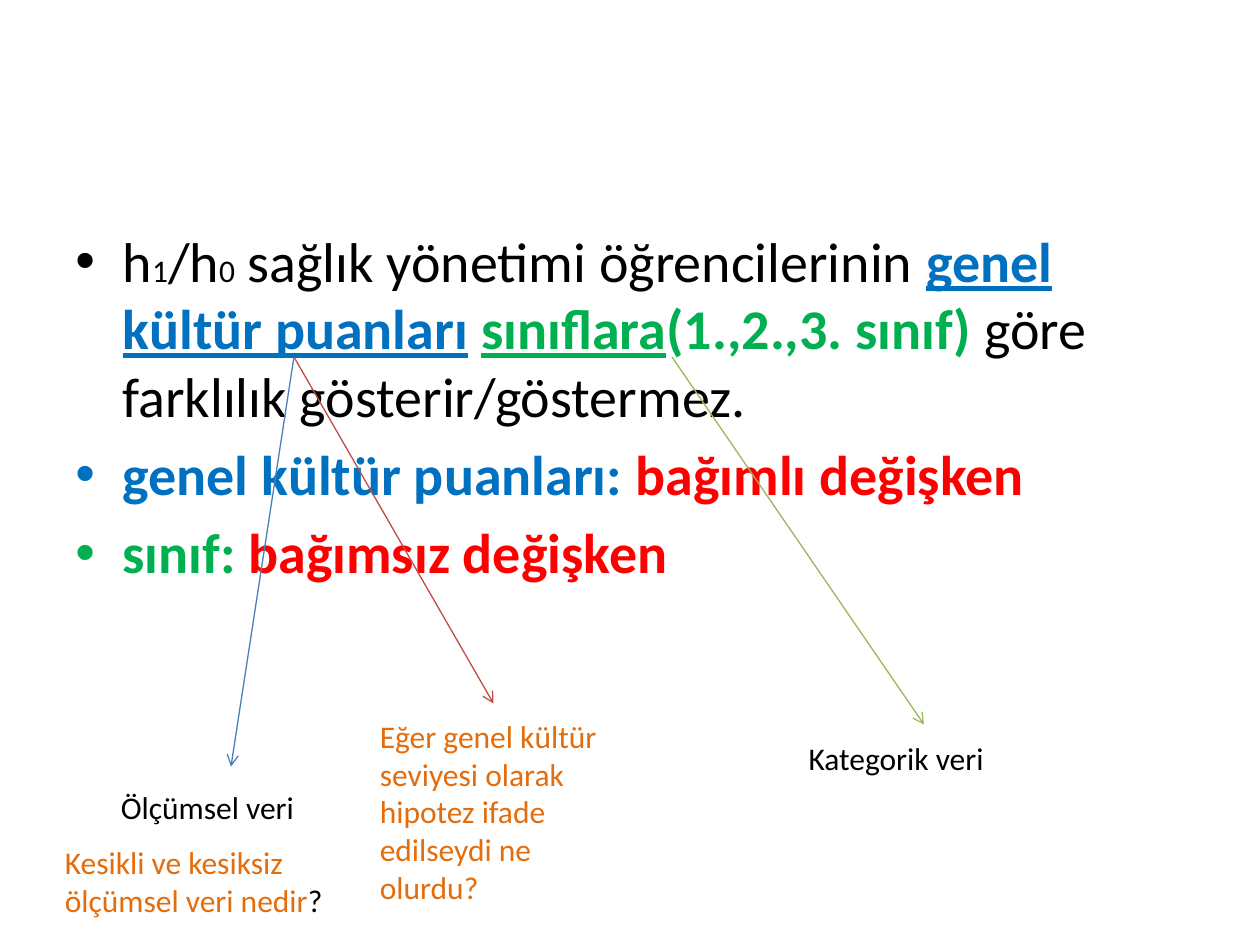
"""Build a slide on dependent and independent variables in a hypothesis."""
from lxml import etree
from pptx import Presentation
from pptx import util as u
from pptx.dml.color import RGBColor
from pptx.enum import shapes
from pptx.oxml.ns import qn

Pt = u.Pt
BLACK, BLUE, GREEN, RED, ORANGE = "000000", "0070C0", "00B050", "FF0000", "E46C0A"


def color(value):
    return RGBColor.from_string(value)


def add_run(paragraph, words, size, fill, bold=False, underline=False):
    run = paragraph.add_run()
    run.text = words
    font = run.font
    font.name, font.size = "Calibri", Pt(size)
    font.bold, font.underline = bold, underline
    font.color.rgb = color(fill)


deck = Presentation()
deck.slide_width, deck.slide_height = Pt(720), Pt(540)
slide = deck.slides.add_slide(deck.slide_layouts[6])

hypothesis = [
    [
        ("h", 32, BLACK),
        ("1", 18, BLACK),
        ("/h", 32, BLACK),
        ("0", 18, BLACK),
        (" sağlık yönetimi öğrencilerinin ", 32, BLACK),
        ("genel kültür puanları", 32, BLUE, True, True),
        (" ", 32, BLACK),
        ("sınıflara", 32, GREEN, True, True),
        ("(1.,2.,3. sınıf)", 32, GREEN, True),
        (" göre farklılık gösterir/göstermez.", 32, BLACK),
    ],
    [("genel kültür puanları: ", 32, BLUE, True), ("bağımlı değişken", 32, RED, True)],
    [("sınıf: ", 32, GREEN, True), ("bağımsız değişken", 32, RED, True)],
]
body = slide.shapes.add_textbox(Pt(36), Pt(126), Pt(648), Pt(356.4)).text_frame
body.word_wrap = True
for index, runs in enumerate(hypothesis):
    item = body.add_paragraph() if index else body.paragraphs[0]
    item.space_before = Pt(6.4)
    for run in runs:
        add_run(item, *run)
    properties = item._p.get_or_add_pPr()
    properties.set("marL", str(Pt(27)))
    properties.set("indent", str(Pt(-27)))
    etree.SubElement(properties, qn("a:buFont")).set("typeface", "Arial")
    etree.SubElement(properties, qn("a:buChar")).set("char", "•")

scores, classes = (168, 204), (384, 204)
arrows = [
    (classes, (528, 414), "98B955"),
    (scores, (132, 438), "4B7EBC"),
    (scores, (282, 402), "BF4C48"),
]
for start, end, stroke in arrows:
    arrow = slide.shapes.add_connector(
        shapes.MSO_CONNECTOR.STRAIGHT, *(Pt(value) for value in start + end)
    )
    arrow.line.color.rgb = color(stroke)
    arrow.line.width = Pt(0.75)
    etree.SubElement(arrow.line._get_or_add_ln(), qn("a:tailEnd")).set("type", "arrow")
    etree.SubElement(arrow._element.spPr, qn("a:effectLst"))

notes = [
    ((62, 447, 144, 29), [("Ölçümsel veri", BLACK)]),
    ((455, 418.5, 144, 29), [("Kategorik veri", BLACK)]),
    (
        (210, 406, 144, 116.6),
        [("Eğer genel kültür seviyesi olarak hipotez ifade edilseydi ne olurdu?", ORANGE)],
    ),
    (
        (30, 478, 163, 51),
        [("Kesikli ve kesiksiz ölçümsel veri nedir", ORANGE), ("?", BLACK)],
    ),
]
for box, runs in notes:
    note = slide.shapes.add_textbox(*(Pt(value) for value in box)).text_frame
    note.word_wrap = True
    for words, fill in runs:
        add_run(note.paragraphs[0], words, 18, fill)

deck.save("out.pptx")
